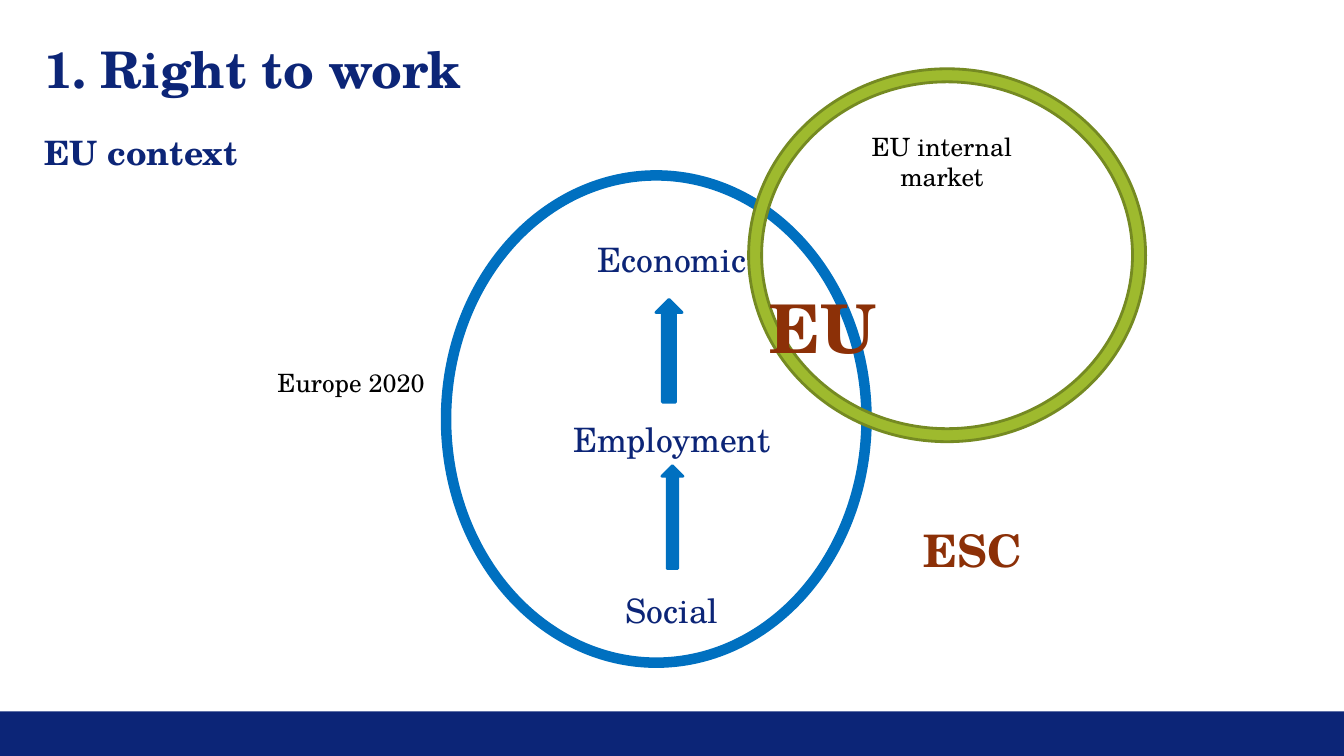
from pptx import Presentation
from pptx import util as u
from pptx.dml.color import RGBColor
from pptx.enum import shapes, text

FONT = "TeX Gyre Schola"
NAVY, BLUE, GREEN, OLIVE, RUST = "0C2577", "0070C0", "9EBA2E", "758A22", "8C3007"
WIDTH, HEIGHT = 13.34, 7.5
COLUMN, ROW = WIDTH / 100, HEIGHT / 100  # the slide is a grid of 100 by 100


def color(value):
    return RGBColor.from_string(value)


def place(box, column, row, columns, rows):
    """Return slide lengths for a grid area counted from the corner of box."""
    return (u.Inches((box[0] + column) * COLUMN), u.Inches((box[1] + row) * ROW),
            u.Inches(columns * COLUMN), u.Inches(rows * ROW))


def add_text(slide, area, words, size=18, fill="000000", bold=False, centred=True,
             inset=0, wrap=True, anchor=text.MSO_ANCHOR.MIDDLE):
    frame = slide.shapes.add_textbox(*area).text_frame
    frame.word_wrap = wrap
    frame.vertical_anchor = anchor
    frame.margin_left = frame.margin_right = u.Inches(inset)
    frame.margin_top = frame.margin_bottom = u.Inches(inset / 2)
    paragraph = frame.paragraphs[0]
    paragraph.text = words
    paragraph.alignment = text.PP_ALIGN.CENTER if centred else text.PP_ALIGN.LEFT
    font = paragraph.font
    font.name, font.size, font.bold = FONT, u.Pt(size), bold
    font.color.rgb = color(fill)


def add_shape(slide, kind, area, fill, line=None, ring=None):
    shape = slide.shapes.add_shape(kind, *area)
    shape.shadow.inherit = False
    shape.fill.solid()
    shape.fill.fore_color.rgb = color(fill)
    if line:
        shape.line.color.rgb = color(line)
        shape.line.width = u.Pt(2)
    else:
        shape.line.fill.background()
    if ring:
        shape.adjustments[0] = ring


def add_header(slide, box):
    for row, words, size in ((0, "1. Right to work", 36), (11.1, "EU context", 24)):
        add_text(slide, place(box, 0, row, 93.4, 6.27), words, size=size,
                 fill=NAVY, bold=True, centred=False)


def add_footer(slide, box):
    add_shape(slide, shapes.MSO_SHAPE.RECTANGLE, place(box, 0, 0, 100, 5.9), NAVY)


def add_diagram(slide, box):
    """Draw the two overlapping rings, the arrows and their labels."""
    arrow, donut = shapes.MSO_SHAPE.UP_ARROW, shapes.MSO_SHAPE.DONUT
    for kind, area, fill, line, ring in (
        (arrow, (29.35, 52.5, 1.57, 13.6), BLUE, BLUE, None),
        (donut, (13, 13.6, 31.86, 65.47), BLUE, BLUE, 0.018),
        (donut, (35.8, 0, 29.54, 49.33), GREEN, OLIVE, 0.035),
        (arrow, (28.9, 30.5, 1.95, 13.6), BLUE, BLUE, None),
    ):
        add_shape(slide, kind, place(box, *area), fill, line, ring)

    for words, area, centred in (
        ("Europe 2020", (0, 38.77, 12.97, 5.33), False),
        ("EU internal market", (41.34, 7.57, 17.69, 5.33), True),
    ):
        add_text(slide, place(box, *area), words, centred=centred, inset=0.1,
                 wrap=centred, anchor=text.MSO_ANCHOR.TOP)

    columns, rows = 20, 8
    for words, column, row, size, fill in (
        ("Economic", 30.1, 25.2, 24, NAVY),
        ("EU", 41.3, 34.1, 48, RUST),
        ("Employment", 30.1, 49, 24, NAVY),
        ("ESC", 52.5, 63.6, 32, RUST),
        ("Social", 30.1, 71.6, 24, NAVY),
    ):
        area = place(box, column - columns / 2, row - rows / 2, columns, rows)
        add_text(slide, area, words, size=size, fill=fill, bold=fill == RUST)


def main():
    presentation = Presentation()
    presentation.slide_width = u.Inches(WIDTH)
    presentation.slide_height = u.Inches(HEIGHT)
    slide = presentation.slides.add_slide(presentation.slide_layouts[6])
    add_footer(slide, (0, 94.1))
    add_header(slide, (3.3, 5.87))
    add_diagram(slide, (19.9, 9.1))
    presentation.save("out.pptx")


if __name__ == "__main__":
    main()
